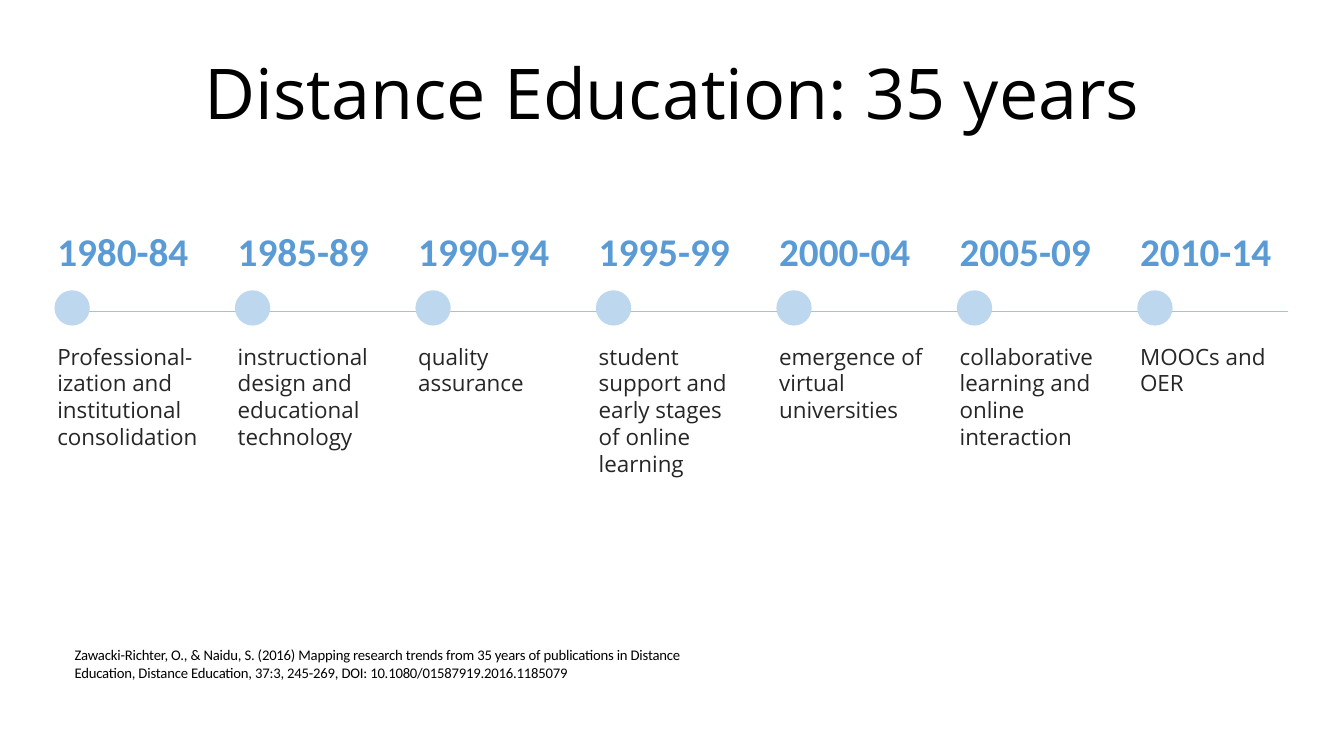
from lxml import etree
from pptx import Presentation
from pptx.dml.color import RGBColor
from pptx.enum.shapes import MSO_CONNECTOR as CONN, MSO_SHAPE as SHAPE
from pptx.enum.text import MSO_ANCHOR as ANCHOR, PP_ALIGN as ALIGN
from pptx.oxml.ns import qn
from pptx.util import Inches, Pt

PERIODS = [
    ("1980-84", "Professional-ization and institutional consolidation"),
    ("1985-89", "instructional design and educational technology"),
    ("1990-94", "quality assurance"),
    ("1995-99", "student support and early stages of online learning"),
    ("2000-04", "emergence of virtual universities"),
    ("2005-09", "collaborative learning and online interaction"),
    ("2010-14", "MOOCs and OER"),
]
CITATION = ("Zawacki-Richter, O., & Naidu, S. (2016) Mapping research trends "
            "from 35 years of publications in Distance Education, Distance "
            "Education, 37:3, 245-269, DOI: 10.1080/01587919.2016.1185079")


def rgb(value):
    return RGBColor.from_string(value)


class Timeline:
    HEAD, BODY = "Open Sans", "Calibri"
    BLACK, TEXT, YEAR = "000000", "262626", "5B9BD5"
    DOT, RULE = "BDD7EE", "9DC3E6"
    LEFT, STEP, COL = 0.47, 1.79, 1.66  # column grid in inches
    YEARS, DOTS, AXIS, NOTES = 2.26, 2.88, 3.09, 3.35  # rows in inches

    def __init__(self, prs):
        self.s = prs.slides.add_slide(prs.slide_layouts[6])

    def column(self, i):
        return self.LEFT + i * self.STEP

    def text(self, words, box, size, font, color, bold=None, spacing=1.0,
             align=ALIGN.LEFT, anchor=ANCHOR.TOP, insets=(0.1, 0.05, 0.1, 0.05)):
        sp = self.s.shapes.add_textbox(*map(Inches, box))
        tf = sp.text_frame
        tf.word_wrap = True
        tf.vertical_anchor = anchor
        (tf.margin_left, tf.margin_top,
         tf.margin_right, tf.margin_bottom) = map(Inches, insets)
        p = tf.paragraphs[0]
        p.alignment, p.line_spacing = align, spacing
        r = p.add_run()
        r.text = words
        r.font.name, r.font.size, r.font.bold = font, Pt(size), bold
        r.font.color.rgb = rgb(color)
        return r

    def line(self, x1, x2, y):
        c = self.s.shapes.add_connector(
            CONN.STRAIGHT, Inches(x1), Inches(y), Inches(x2), Inches(y))
        c.line.color.rgb, c.line.width = rgb(self.RULE), Pt(1)
        etree.SubElement(c._element.spPr, qn("a:effectLst"))

    def dot(self, x, y, size=0.35):
        sp = self.s.shapes.add_shape(
            SHAPE.OVAL, Inches(x), Inches(y), Inches(size), Inches(size))
        sp.shadow.inherit = False
        sp.fill.solid()
        sp.fill.fore_color.rgb = rgb(self.DOT)
        sp.line.fill.background()

    def period(self, i, years, theme):
        x = self.column(i)
        self.text(years, (x, self.YEARS, self.COL, 0.63), 28, self.BODY,
                  self.YEAR, bold=True, spacing=0.9)
        self.dot(x + 0.07, self.DOTS)
        self.text(theme, (x, self.NOTES, self.COL, 1.29), 16, self.HEAD, self.TEXT)


def main():
    prs = Presentation()
    prs.slide_width, prs.slide_height = Inches(13.33), Inches(7.5)
    t = Timeline(prs)

    # Title
    t.text("Distance Education: 35 years", (0.48, 0.4, 12.38, 1.02), 50, t.HEAD,
           t.BLACK, spacing=0.9, align=ALIGN.CENTER, anchor=ANCHOR.MIDDLE,
           insets=(0.1, 0.1, 0.1, 0))

    # Axis and periods
    t.line(0.62, 12.77, t.AXIS)
    for i, (years, theme) in enumerate(PERIODS):
        t.period(i, years, theme)

    # Source, set slightly tight
    r = t.text(CITATION, (0.73, 6.4, 6.4, 0.37), 10.5, t.BODY, t.BLACK,
               insets=(0.01, 0.01, 0, 0))
    r.font._element.set("spc", "-10")

    prs.save("out.pptx")


if __name__ == "__main__":
    main()
